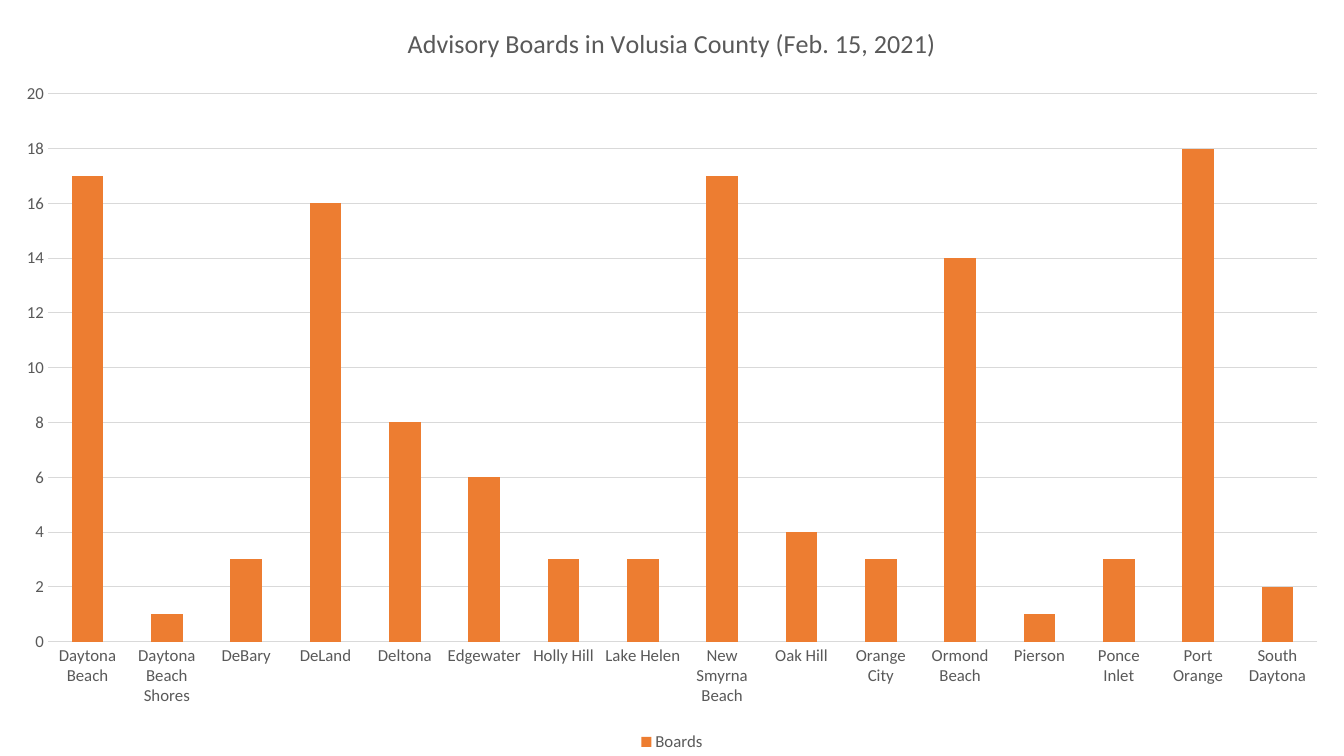
from pptx import Presentation
from pptx.chart.data import CategoryChartData
from pptx.dml.color import RGBColor
from pptx.enum.chart import (XL_CHART_TYPE, XL_LEGEND_POSITION as LEGEND,
                             XL_TICK_MARK as TICK)
from pptx.util import Pt

FONT = "Calibri"
GRAY, GRID, ORANGE, WHITE = "595959", "D9D9D9", "ED7D31", "FFFFFF"
BOARDS = {
    "Daytona Beach": 17, "Daytona Beach Shores": 1, "DeBary": 3, "DeLand": 16,
    "Deltona": 8, "Edgewater": 6, "Holly Hill": 3, "Lake Helen": 3,
    "New Smyrna Beach": 17, "Oak Hill": 4, "Orange City": 3,
    "Ormond Beach": 14, "Pierson": 1, "Ponce Inlet": 3, "Port Orange": 18,
    "South Daytona": 2,
}


def color(hex_string):
    return RGBColor.from_string(hex_string)


def style_font(font, size):
    font.name = FONT
    font.size = Pt(size)
    font.bold = False
    font.color.rgb = color(GRAY)


def style_axis(axis):
    axis.major_tick_mark = axis.minor_tick_mark = TICK.NONE
    axis.format.line.fill.background()
    style_font(axis.tick_labels.font, 12)


def add_column_chart(slide, width, height, title, series_name, values):
    data = CategoryChartData(number_format="General")
    data.categories = list(values)
    data.add_series(series_name, list(values.values()))
    chart = slide.shapes.add_chart(
        XL_CHART_TYPE.COLUMN_CLUSTERED, 0, 0, width, height, data).chart
    style_font(chart.font, 12)

    # Title
    chart.has_title = True
    chart.chart_title.include_in_layout = False
    paragraph = chart.chart_title.text_frame.paragraphs[0]
    paragraph.text = title
    style_font(paragraph.font, 18.6)

    # Columns
    plot = chart.plots[0]
    plot.gap_width = 150
    plot.vary_by_categories = False
    fill = plot.series[0].format.fill
    fill.solid()
    fill.fore_color.rgb = color(ORANGE)

    # Axes and gridlines
    style_axis(chart.category_axis)
    value_axis = chart.value_axis
    style_axis(value_axis)
    value_axis.minimum_scale, value_axis.maximum_scale = 0, 20
    value_axis.major_unit = 2
    value_axis.has_major_gridlines = True
    grid_line = value_axis.major_gridlines.format.line
    grid_line.width = Pt(0.75)
    grid_line.color.rgb = color(GRID)

    # Legend
    chart.has_legend = True
    chart.legend.position = LEGEND.BOTTOM
    chart.legend.include_in_layout = False
    style_font(chart.legend.font, 12)


def main():
    presentation = Presentation()
    presentation.slide_width = Pt(960)
    presentation.slide_height = Pt(540)
    slide = presentation.slides.add_slide(presentation.slide_layouts[6])
    slide.background.fill.solid()
    slide.background.fill.fore_color.rgb = color(WHITE)
    add_column_chart(slide, Pt(960), Pt(540),
                     "Advisory Boards in Volusia County (Feb. 15, 2021)",
                     "Boards", BOARDS)
    presentation.save("out.pptx")


if __name__ == "__main__":
    main()
